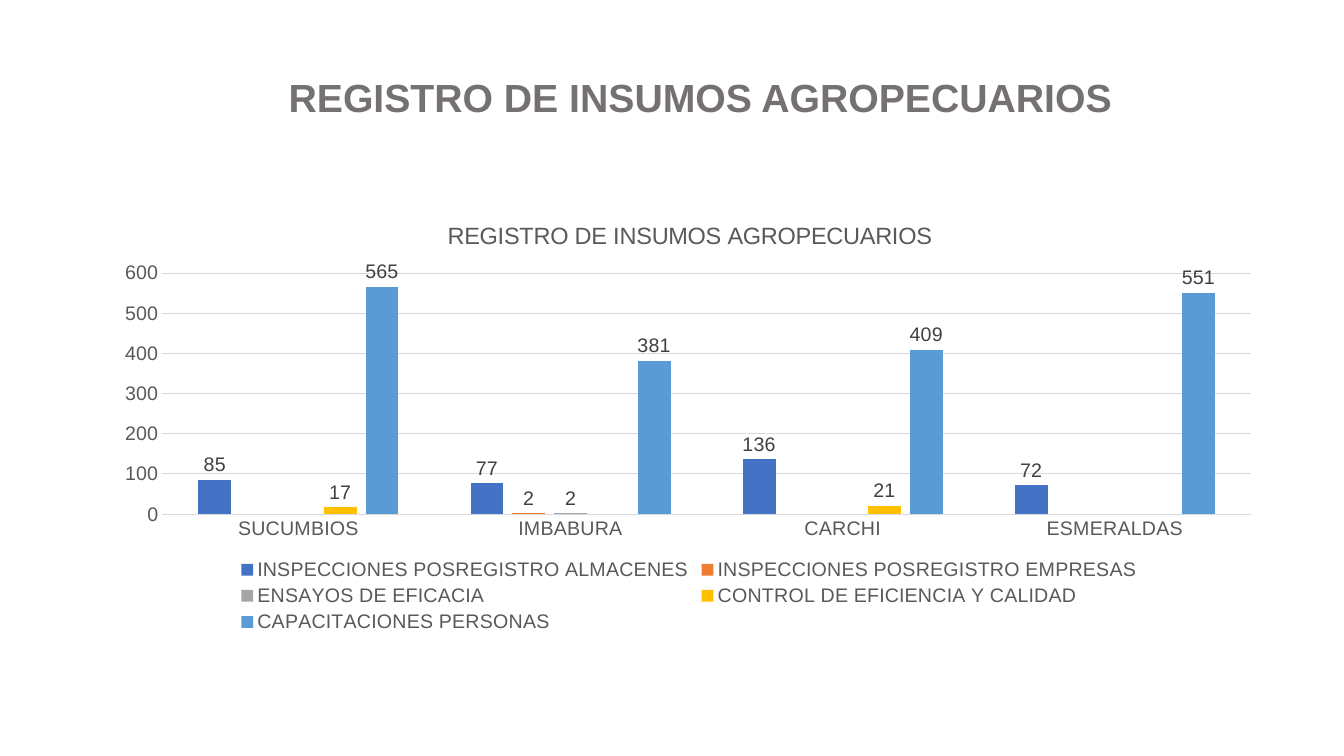
from lxml import etree
from pptx import Presentation
from pptx.chart.data import CategoryChartData
from pptx.dml.color import RGBColor
from pptx.enum.chart import XL_CHART_TYPE, XL_LABEL_POSITION, XL_LEGEND_POSITION, XL_TICK_MARK
from pptx.enum.text import MSO_ANCHOR, PP_ALIGN
from pptx.oxml.ns import qn
from pptx.util import Inches, Pt

COLORS = {"heading": "767171", "text": "595959", "label": "404040", "grid": "D9D9D9"}
HEADING = "REGISTRO DE INSUMOS AGROPECUARIOS"
PROVINCES = ["SUCUMBIOS", "IMBABURA", "CARCHI", "ESMERALDAS"]
ACTIVITIES = [
    ("INSPECCIONES POSREGISTRO ALMACENES", "4472C4", (85, 77, 136, 72)),
    ("INSPECCIONES POSREGISTRO EMPRESAS", "ED7D31", (None, 2, None, None)),
    ("ENSAYOS DE EFICACIA", "A5A5A5", (None, 2, None, None)),
    ("CONTROL DE EFICIENCIA Y CALIDAD", "FFC000", (17, None, 21, None)),
    ("CAPACITACIONES PERSONAS", "5B9BD5", (565, 381, 409, 551)),
]


def write(frame, text, size, color, bold=False, align=PP_ALIGN.CENTER):
    paragraph = frame.paragraphs[0]
    paragraph.alignment = align
    run = paragraph.add_run()
    run.text = text
    style(run.font, size, color, bold)


def style(font, size, color, bold=False):
    font.name = "Arial"
    font.size = Pt(size)
    font.bold = bold
    font.color.rgb = RGBColor.from_string(COLORS[color])


prs = Presentation()
prs.slide_width, prs.slide_height = Inches(13.33), Inches(7.5)
slide = prs.slides.add_slide(prs.slide_layouts[6])

heading = slide.shapes.add_textbox(Inches(0.78), Inches(0.68), Inches(12.33), Inches(0.57)).text_frame
heading.word_wrap = True
heading.vertical_anchor = MSO_ANCHOR.TOP
write(heading, HEADING, 28, "heading", bold=True)

data = CategoryChartData()
data.categories = PROVINCES
for activity, _, counts in ACTIVITIES:
    data.add_series(activity, counts)
chart = slide.shapes.add_chart(
    XL_CHART_TYPE.COLUMN_CLUSTERED, Inches(1.03), Inches(1.97), Inches(11.61), Inches(4.35), data
).chart
style(chart.font, 14, "text")
chart.has_title = True
write(chart.chart_title.text_frame, HEADING, 16.8, "text")
chart.chart_title.include_in_layout = False

chart.has_legend = True
chart.legend.position = XL_LEGEND_POSITION.BOTTOM
chart.legend.include_in_layout = False
style(chart.legend.font, 14, "text")

grid_color = RGBColor.from_string(COLORS["grid"])
counts_axis, provinces_axis = chart.value_axis, chart.category_axis
for axis in (counts_axis, provinces_axis):
    axis.major_tick_mark = axis.minor_tick_mark = XL_TICK_MARK.NONE
    style(axis.tick_labels.font, 14, "text")
counts_axis.minimum_scale, counts_axis.maximum_scale, counts_axis.major_unit = 0, 600, 100
counts_axis.format.line.fill.background()
for line in (counts_axis.major_gridlines.format.line, provinces_axis.format.line):
    line.color.rgb = grid_color
    line.width = Pt(0.75)

plot = chart.plots[0]
plot.gap_width, plot.overlap, plot.vary_by_categories = 219, -27, False
for series, (_, color, _) in zip(plot.series, ACTIVITIES):
    series.format.fill.solid()
    series.format.fill.fore_color.rgb = RGBColor.from_string(color)
    series.invert_if_negative = False
    labels = series.data_labels
    labels.show_value = True
    labels.position = XL_LABEL_POSITION.OUTSIDE_END
    style(labels.font, 14, "label")

# Fixed places, as fractions of the chart, for the title and the plot area
title_place = [("xMode", "edge"), ("yMode", "edge"), ("x", 0.29), ("y", 0.04)]
plot_place = [("layoutTarget", "inner"), ("xMode", "edge"), ("yMode", "edge"),
              ("x", 0.05), ("y", 0.17), ("w", 0.93), ("h", 0.55)]
chart_xml = chart.element.find(qn("c:chart"))
for tag, index, place in (("c:title", 1, title_place), ("c:plotArea", 0, plot_place)):
    part = chart_xml.find(qn(tag))
    for old in part.findall(qn("c:layout")):
        part.remove(old)
    layout = etree.Element(qn("c:layout"))
    manual = etree.SubElement(layout, qn("c:manualLayout"))
    for name, value in place:
        etree.SubElement(manual, qn(f"c:{name}")).set("val", str(value))
    part.insert(index, layout)

prs.save("out.pptx")
